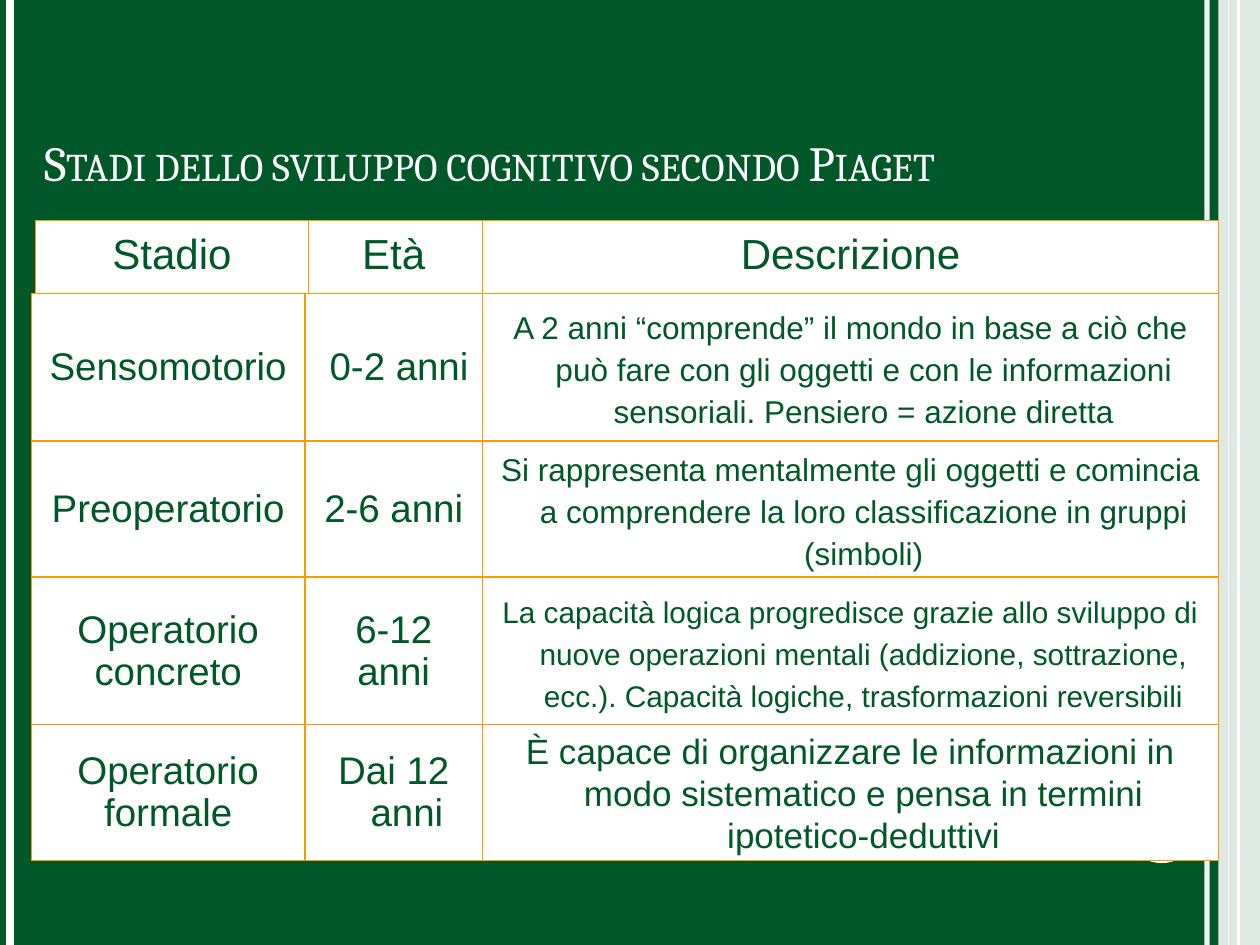
from dataclasses import dataclass

from lxml import etree
from pptx import Presentation
from pptx.dml.color import RGBColor
from pptx.enum.shapes import MSO_CONNECTOR, MSO_SHAPE
from pptx.enum.text import MSO_ANCHOR, MSO_AUTO_SIZE, PP_ALIGN
from pptx.oxml.ns import qn
from pptx.util import Inches, Pt

RECT, OVAL = MSO_SHAPE.RECTANGLE, MSO_SHAPE.OVAL
STRAIGHT = MSO_CONNECTOR.STRAIGHT
CENTER, LEFT = PP_ALIGN.CENTER, PP_ALIGN.LEFT
MIDDLE, BOTTOM = MSO_ANCHOR.MIDDLE, MSO_ANCHOR.BOTTOM

GREEN, WHITE, ORANGE = "005828", "FFFFFF", "FF9900"
SLIDE_W, SLIDE_H = 10, 7.5
COLUMN_EDGES = [0.25, 2.42, 3.83, 9.67]
ROW_EDGES = [1.75, 2.33, 3.5, 4.58, 5.75, 6.83]


@dataclass
class Rule:
    x: float
    width: float
    opacity: int = 100


@dataclass
class Cell:
    text: str
    size: int = 22
    hanging: float = 0.21
    shift: float = 0


RULES = [Rule(9.58, 3, 93), Rule(0.08, 4.5), Rule(9.83, 1.5)]
STRIP_RULE = Rule(9.75, 0.75)

ROWS = [
    [Cell("Stadio", 24, 0.32, 0.03), Cell("Età", 24, 0), Cell("Descrizione", 24, 0)],
    [Cell("Sensomotorio"), Cell(" 0-2 anni"),
     Cell("A 2 anni “comprende” il mondo in base a ciò che può fare con gli oggetti "
          "e con le informazioni sensoriali. Pensiero = azione diretta", 18)],
    [Cell("Preoperatorio"), Cell("2-6 anni"),
     Cell("Si rappresenta mentalmente gli oggetti e comincia a comprendere la loro "
          "classificazione in gruppi (simboli)", 18)],
    [Cell("Operatorio\nconcreto"), Cell("6-12\nanni"),
     Cell("La capacità logica progredisce grazie allo sviluppo di nuove operazioni "
          "mentali (addizione, sottrazione, ecc.). Capacità logiche, trasformazioni "
          "reversibili", 17)],
    [Cell("Operatorio\nformale"), Cell("Dai 12 anni"),
     Cell("È capace di organizzare le informazioni in modo sistematico e pensa in "
          "termini ipotetico-deduttivi", 20)],
]


def rgb(value: str) -> RGBColor:
    return RGBColor.from_string(value)


def apply(target, values: dict) -> None:
    for name, value in values.items():
        setattr(target, name, value)


def set_opacity(shape, percent: int) -> None:
    """Make the first colour of the shape, fill or line, partly transparent."""
    color = next(shape._element.spPr.iter(qn("a:srgbClr")))
    etree.SubElement(color, qn("a:alpha")).set("val", str(percent * 1000))


def add_rule(s, rule: Rule) -> None:
    line = s.shapes.add_connector(STRAIGHT, Inches(rule.x), 0, Inches(rule.x), Inches(SLIDE_H))
    line.line.color.rgb = rgb(WHITE)
    line.line.width = Pt(rule.width)
    if rule.opacity < 100:
        set_opacity(line, rule.opacity)
    etree.SubElement(line._element.spPr, qn("a:effectLst"))


def add_white_shape(s, kind, x: float, y: float, w: float, h: float):
    sp = s.shapes.add_shape(kind, Inches(x), Inches(y), Inches(w), Inches(h))
    sp.shadow.inherit = False
    sp.fill.solid()
    sp.fill.fore_color.rgb = rgb(WHITE)
    sp.line.fill.background()
    return sp


def add_cell(s, cell: Cell, x: float, y: float, w: float, h: float) -> None:
    sp = add_white_shape(s, RECT, x + cell.shift, y, w, h)
    sp.line.color.rgb = rgb(ORANGE)
    sp.line.width = Pt(0.75)
    tf = sp.text_frame
    apply(tf, {"word_wrap": True, "vertical_anchor": MIDDLE, "text": cell.text})
    for p in tf.paragraphs:
        apply(p, {"alignment": CENTER, "line_spacing": Pt(24)})
        pPr = p._p.get_or_add_pPr()
        pPr.set("marL", str(Inches(cell.hanging)))
        pPr.set("indent", str(-Inches(cell.hanging)))
        for r in p.runs:
            apply(r.font, {"name": "Arial", "size": Pt(cell.size)})
            r.font.color.rgb = rgb(GREEN)


def add_stage_grid(s) -> None:
    """Draw each row from right to left, the header last so its border stays on top."""
    for row in reversed(range(len(ROWS))):
        y, bottom = ROW_EDGES[row:row + 2]
        for col in reversed(range(len(ROWS[row]))):
            x, right = COLUMN_EDGES[col:col + 2]
            add_cell(s, ROWS[row][col], x, y, right - x, bottom - y)


def set_title(s, text: str) -> None:
    title = s.shapes.title
    apply(title, {"left": Inches(0.25), "top": Inches(1),
                  "width": Inches(9.58), "height": Inches(0.57)})
    tf = title.text_frame
    apply(tf, {"text": text, "word_wrap": True, "vertical_anchor": BOTTOM,
               "auto_size": MSO_AUTO_SIZE.SHAPE_TO_FIT_TEXT})
    p = tf.paragraphs[0]
    p.alignment = LEFT
    r = p.runs[0]
    apply(r.font, {"name": "Cambria", "size": Pt(28)})
    r.font.color.rgb = rgb(WHITE)
    r.font._element.set("cap", "small")


def main() -> None:
    prs = Presentation()
    prs.slide_width, prs.slide_height = Inches(SLIDE_W), Inches(SLIDE_H)
    s = prs.slides.add_slide(prs.slide_layouts[5])
    s.background.fill.solid()
    s.background.fill.fore_color.rgb = rgb(GREEN)

    for rule in RULES:
        add_rule(s, rule)
    strip = add_white_shape(s, RECT, 9.67, 0, 0.33, SLIDE_H)
    set_opacity(strip, 87)
    add_rule(s, STRIP_RULE)
    add_white_shape(s, OVAL, 8.92, 6.25, 0.6, 0.6)

    add_stage_grid(s)
    set_title(s, "Stadi dello sviluppo cognitivo secondo Piaget")
    prs.save("out.pptx")


if __name__ == "__main__":
    main()
